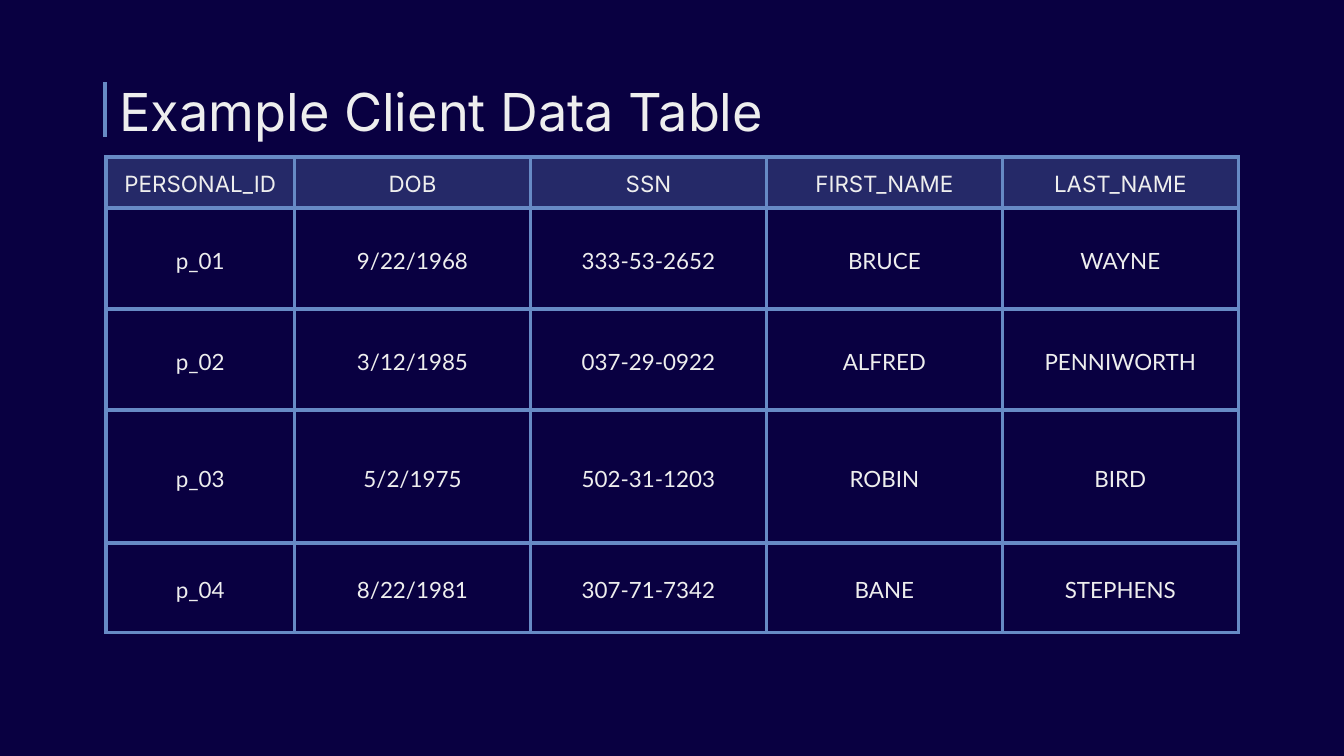
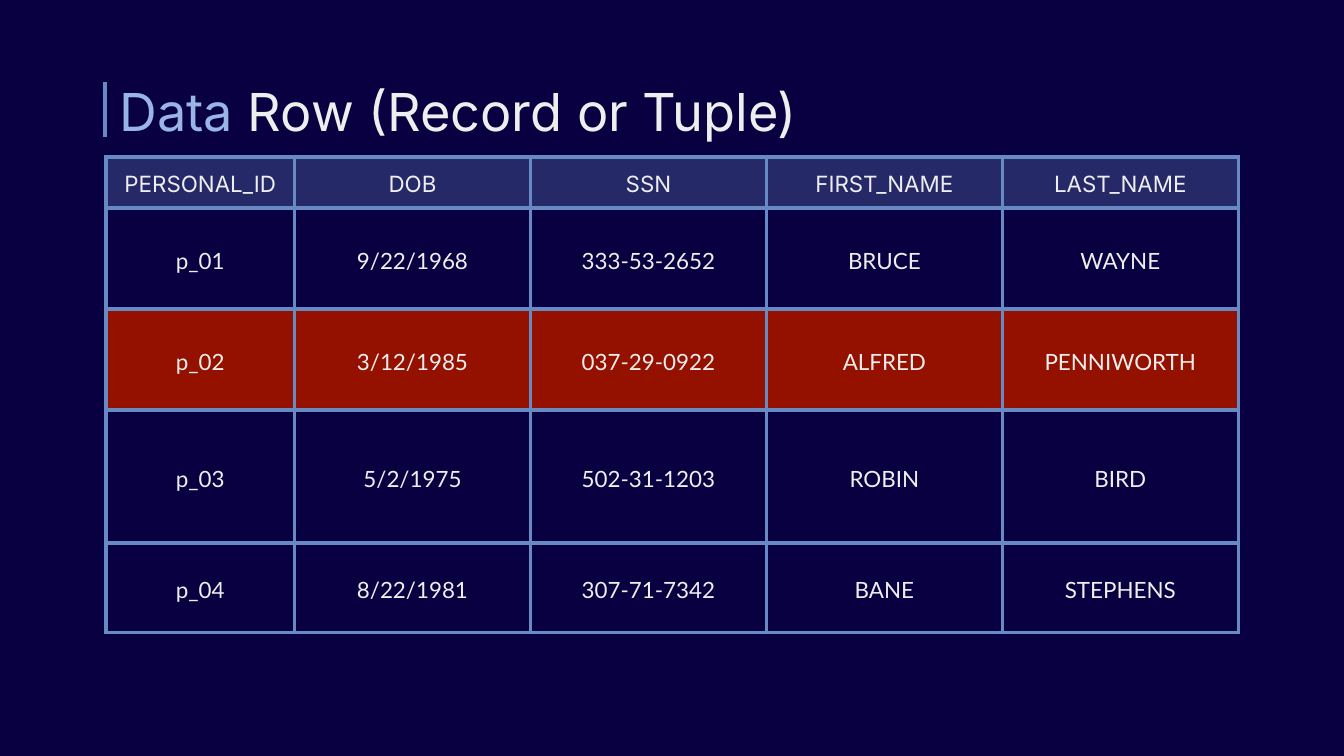
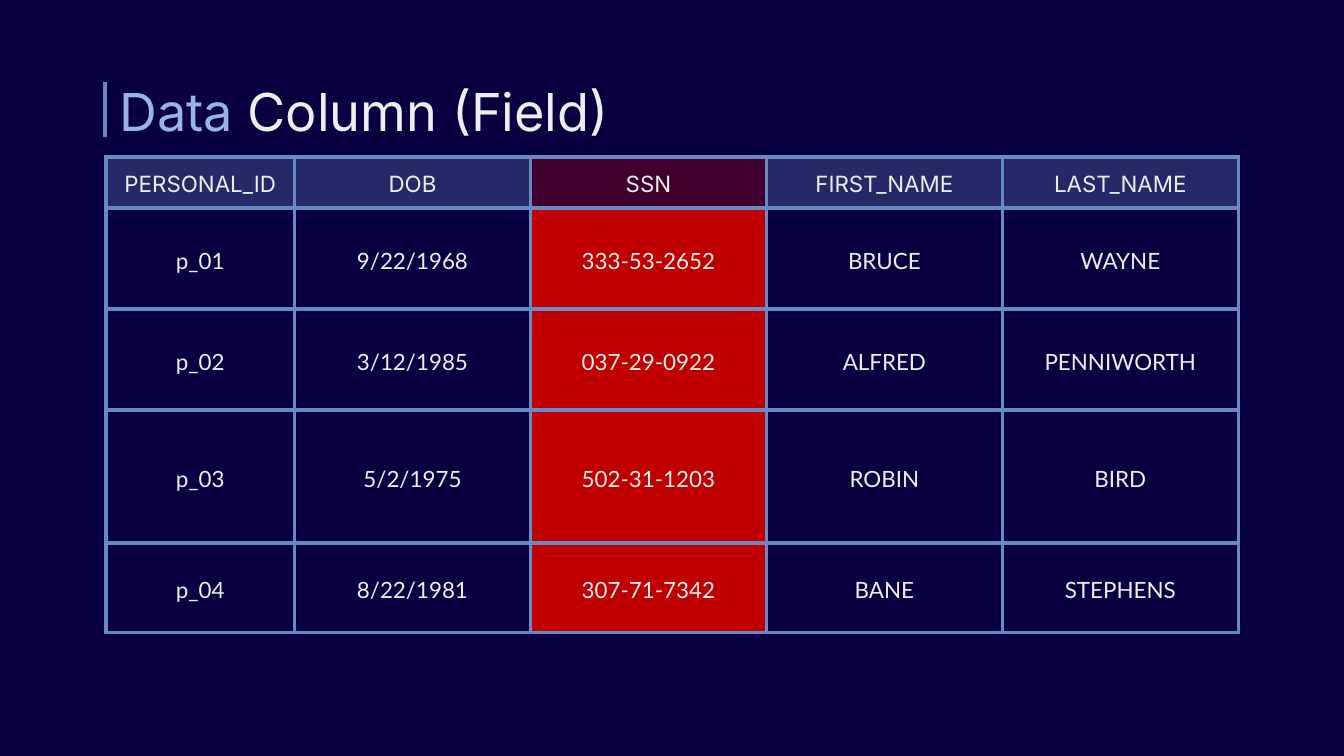
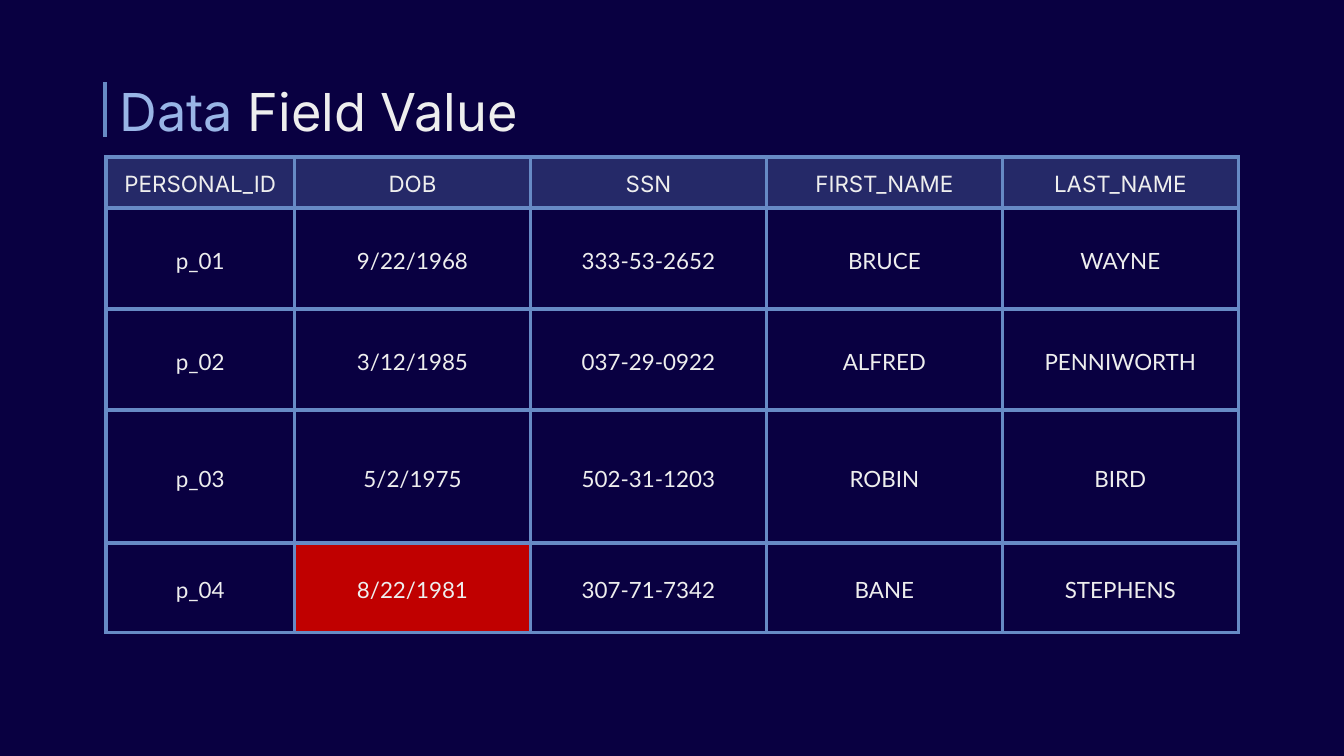
from lxml.etree import SubElement
from pptx import Presentation
from pptx.dml.color import RGBColor
from pptx.enum.shapes import MSO_CONNECTOR
from pptx.enum.text import MSO_ANCHOR, MSO_AUTO_SIZE, PP_ALIGN
from pptx.oxml import parse_xml
from pptx.oxml.ns import nsdecls, qn
from pptx.util import Pt

NAVY = RGBColor(0x09, 0x00, 0x41)
BLUE = RGBColor(0x67, 0x8A, 0xC5)
LIGHT_BLUE = RGBColor(0x99, 0xB5, 0xE6)
OFF_WHITE = RGBColor(0xEE, 0xEE, 0xEE)
DARK_RED = RGBColor(0x94, 0x11, 0x00)
RED = RGBColor(0xC0, 0x00, 0x00)

HEADING_FONT = "Inter"
BODY_FONT = "Lato"
RULE_WIDTH = 2.25
HEADER_OPACITY = 30

COLUMN_WIDTHS = [101] + [126.4] * 4
ROW_HEIGHTS = [27.5, 54.1, 54.1, 71.2, 48]

# Cell margins as (horizontal, vertical)
HEADER_MARGINS = (7.2, 3.6)
ID_MARGINS = (3.6, 5)
VALUE_MARGINS = (2, 1.5)

CLIENTS = [
    ["PERSONAL_ID", "DOB", "SSN", "FIRST_NAME", "LAST_NAME"],
    ["p_01", "9/22/1968", "333-53-2652", "BRUCE", "WAYNE"],
    ["p_02", "3/12/1985", "037-29-0922", "ALFRED", "PENNIWORTH"],
    ["p_03", "5/2/1975", "502-31-1203", "ROBIN", "BIRD"],
    ["p_04", "8/22/1981", "307-71-7342", "BANE", "STEPHENS"],
]
ROWS = range(len(CLIENTS))
COLUMNS = range(len(CLIENTS[0]))
SSN_COLUMN = CLIENTS[0].index("SSN")

# Each slide: title runs with their colours, then highlighted (row, column) cells
SLIDES = [
    ([("Example Client Data Table", OFF_WHITE)], {}),
    ([("Data", LIGHT_BLUE), (" Row (Record or Tuple)", OFF_WHITE)],
     {(2, column): DARK_RED for column in COLUMNS}),
    ([("Data", LIGHT_BLUE), (" Column (Field)", OFF_WHITE)],
     {(row, SSN_COLUMN): RED for row in ROWS}),
    ([("Data", LIGHT_BLUE), (" Field Value", OFF_WHITE)], {(4, 1): RED}),
]


class Deck:
    def __init__(self):
        self.presentation = Presentation()
        self.presentation.slide_width = Pt(720)
        self.presentation.slide_height = Pt(405)
        backdrop = self.presentation.slide_master.background.fill
        backdrop.solid()
        backdrop.fore_color.rgb = NAVY
        self.slide = None

    def add_slide(self):
        title_only = self.presentation.slide_layouts[5]
        self.slide = self.presentation.slides.add_slide(title_only)

    def add_title_rule(self):
        rule = self.slide.shapes.add_connector(
            MSO_CONNECTOR.STRAIGHT, Pt(56.2), Pt(73.4), Pt(56.2), Pt(43.9))
        rule.line.color.rgb = BLUE
        rule.line.width = Pt(RULE_WIDTH)
        SubElement(rule.element.spPr, qn("a:effectLst"))

    def add_title(self, parts):
        title = self.slide.shapes.title
        title.left, title.top = Pt(56.9), Pt(35.3)
        title.width, title.height = Pt(607), Pt(45.4)
        frame = title.text_frame
        frame.word_wrap = True
        frame.auto_size = MSO_AUTO_SIZE.NONE
        frame.vertical_anchor = MSO_ANCHOR.TOP
        frame.margin_left = frame.margin_right = Pt(7.2)
        frame.margin_top = frame.margin_bottom = Pt(7.2)
        paragraph = frame.paragraphs[0]
        paragraph.alignment = PP_ALIGN.LEFT
        paragraph.font.name = HEADING_FONT
        paragraph.font.size = Pt(28)
        for text, color in parts:
            run = paragraph.add_run()
            run.text = text
            run.font.color.rgb = color

    def add_client_table(self, highlights):
        table = self.slide.shapes.add_table(
            len(ROWS), len(COLUMNS), Pt(56.8), Pt(84.1),
            Pt(sum(COLUMN_WIDTHS)), Pt(sum(ROW_HEIGHTS))).table
        table.first_row = table.horz_banding = False
        for column, width in zip(table.columns, COLUMN_WIDTHS):
            column.width = Pt(width)
        for row, height in zip(table.rows, ROW_HEIGHTS):
            row.height = Pt(height)
        for row in ROWS:
            for column in COLUMNS:
                cell = table.cell(row, column)
                is_header = row == 0
                if is_header:
                    margins = HEADER_MARGINS
                else:
                    margins = VALUE_MARGINS if column else ID_MARGINS
                self.write_cell(cell, CLIENTS[row][column], margins,
                                HEADING_FONT if is_header else BODY_FONT)
                color = highlights.get((row, column), BLUE if is_header else None)
                self.fill_cell(cell, color, HEADER_OPACITY if is_header else 100)
                self.outline_cell(cell)

    def write_cell(self, cell, text, margins, font_name):
        cell.margin_left = cell.margin_right = Pt(margins[0])
        cell.margin_top = cell.margin_bottom = Pt(margins[1])
        cell.vertical_anchor = MSO_ANCHOR.MIDDLE
        paragraph = cell.text_frame.paragraphs[0]
        paragraph.text = text
        paragraph.alignment = PP_ALIGN.CENTER
        paragraph.line_spacing = 1.15
        paragraph.font.name = font_name
        paragraph.font.size = Pt(12)
        paragraph.font.color.rgb = OFF_WHITE

    def fill_cell(self, cell, color, opacity):
        if color is None:
            cell.fill.background()
            return
        cell.fill.solid()
        cell.fill.fore_color.rgb = color
        if opacity < 100:
            swatch = cell._tc.tcPr.find(".//" + qn("a:srgbClr"))
            SubElement(swatch, qn("a:alpha"), val=str(opacity * 1000))

    def outline_cell(self, cell):
        """Draw all four borders; the schema wants them ahead of the fill."""
        for position, side in enumerate("LRTB"):
            cell._tc.tcPr.insert(position, parse_xml(
                f'<a:ln{side} {nsdecls("a")} w="{Pt(RULE_WIDTH)}"><a:solidFill>'
                f'<a:srgbClr val="{BLUE}"/></a:solidFill></a:ln{side}>'))


def main():
    deck = Deck()
    for title_parts, highlights in SLIDES:
        deck.add_slide()
        deck.add_title_rule()
        deck.add_title(title_parts)
        deck.add_client_table(highlights)
    deck.presentation.save("out.pptx")


if __name__ == "__main__":
    main()
